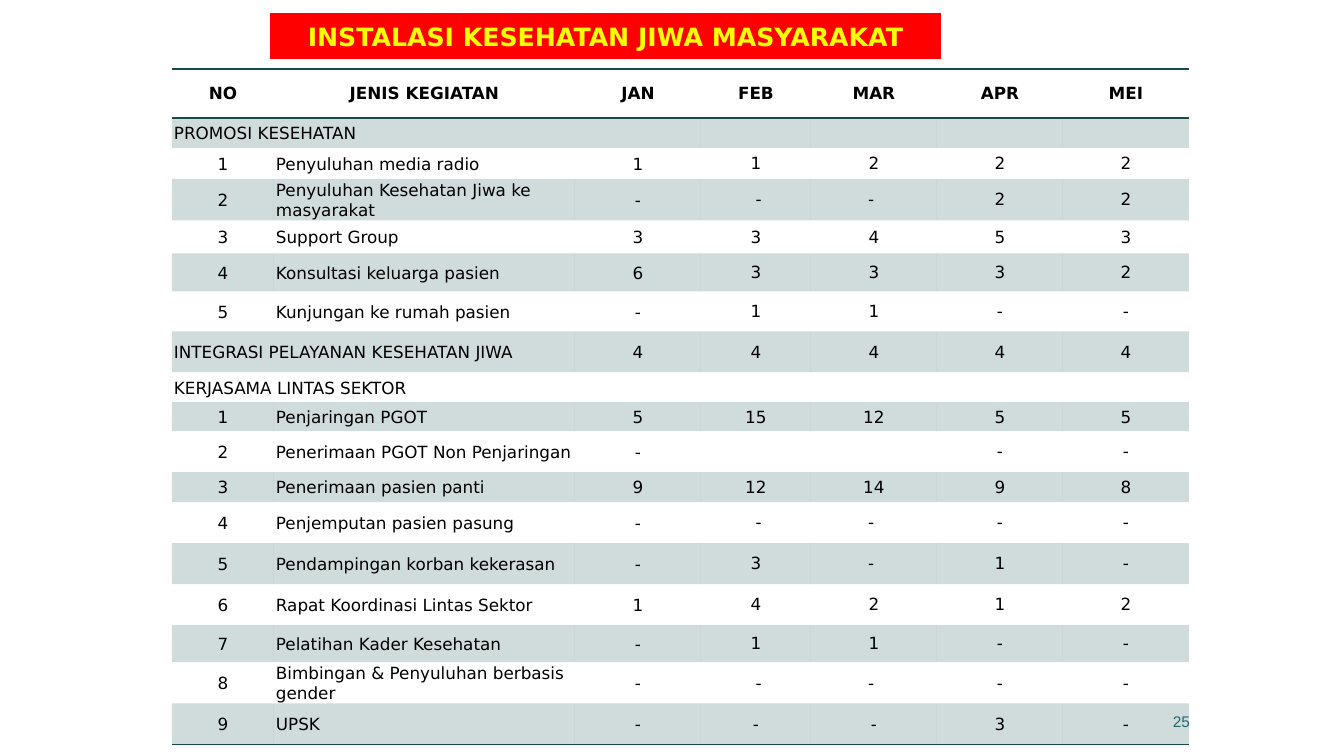
from typing import NamedTuple

from pptx import Presentation
from pptx import util as u
from pptx.dml.color import RGBColor
from pptx.enum import text
from pptx.oxml import parse_xml
from pptx.oxml.ns import nsdecls, qn
from pptx.oxml.xmlchemy import OxmlElement
from pptx.slide import Slide
from pptx.table import Table, _Cell

EMU_PER_PX = 914400 / 100.8
BLACK = RGBColor(0x00, 0x00, 0x00)
DARK_TEAL = RGBColor(0x16, 0x4B, 0x4F)
PAGE_TEAL = RGBColor(0x1F, 0x69, 0x6F)
RED = RGBColor(0xFF, 0x00, 0x00)
YELLOW = RGBColor(0xFF, 0xFF, 0x00)
FONT = "DejaVu Sans"
PLAIN_TABLE_STYLE = "{2D5ABB26-0587-4C30-8999-92F81FD0307C}"
COLUMN_WIDTHS = (102, 301, 126, 110, 126, 126, 126)


class Row(NamedTuple):
    height: int
    labels: tuple[str, str]
    counts: tuple[str, ...] = ("",) * 5
    span: int = 1


HEADER = Row(49, ("NO", "JENIS KEGIATAN"), ("JAN", "FEB", "MAR", "APR", "MEI"))
ROWS = (
    HEADER,
    Row(30, ("PROMOSI KESEHATAN", ""), span=3),
    Row(31, ("1", "Penyuluhan media radio"), ("1", "1", "2", "2", "2")),
    Row(41, ("2", "Penyuluhan Kesehatan Jiwa ke masyarakat"), ("-", " -", "- ", "2", "2")),
    Row(33, ("3", "Support Group"), ("3", "3", "4", "5", "3")),
    Row(38, ("4", "Konsultasi keluarga pasien"), ("6", "3", "3", "3", "2")),
    Row(40, ("5", "Kunjungan ke rumah pasien"), ("-", "1", "1", "-", "-")),
    Row(41, ("INTEGRASI PELAYANAN KESEHATAN JIWA", ""), ("4",) * 5, span=2),
    Row(30, ("KERJASAMA LINTAS SEKTOR ", ""), span=2),
    Row(29, ("1", "Penjaringan PGOT"), ("5", "15", "12", "5", "5")),
    Row(41, ("2", "Penerimaan PGOT Non Penjaringan"), ("-", "", "", "-", "-")),
    Row(30, ("3", "Penerimaan pasien panti"), ("9", "12", "14", "9", "8")),
    Row(41, ("4", "Penjemputan pasien pasung"), ("-", " -", "- ", "-", "-")),
    Row(41, ("5", "Pendampingan korban kekerasan"), ("-", "3", "- ", "1", "-")),
    Row(41, ("6", "Rapat Koordinasi Lintas Sektor"), ("1", "4", "2", "1", "2")),
    Row(37, ("7", "Pelatihan Kader Kesehatan"), ("-", "1", "1", "-", "-")),
    Row(41, ("8", "Bimbingan & Penyuluhan berbasis gender"), ("-", " -", "- ", "-", "-")),
    Row(41, ("9", "UPSK"), ("-", "-", "-", "3", "-")),
)


def px(length: int) -> u.Emu:
    return u.Emu(round(length * EMU_PER_PX))


def add_border(cell: _Cell, edge: str) -> None:
    cell._tc.get_or_add_tcPr().append(parse_xml(
        f'<a:{edge} {nsdecls("a")} w="12700"><a:solidFill>'
        f'<a:srgbClr val="{DARK_TEAL}"/></a:solidFill></a:{edge}>'))


def fill_band(cell: _Cell) -> None:
    """Fill the cell with teal at 20 % opacity."""
    cell.fill.solid()
    cell.fill.fore_color.rgb = DARK_TEAL
    alpha = OxmlElement("a:alpha")
    alpha.set("val", "20000")
    cell._tc.tcPr.find(f'{qn("a:solidFill")}/{qn("a:srgbClr")}').append(alpha)


def write_cell(cell: _Cell, content: str, is_header: bool, column: int, centred: bool) -> None:
    cell.vertical_anchor = text.MSO_ANCHOR.MIDDLE
    side = 20 if is_header else 2 if column < 3 else 1
    cell.margin_left = cell.margin_right = px(side)
    cell.margin_top = px(8 if is_header else min(side, 2))
    cell.margin_bottom = px(8 if is_header else 0)
    paragraph = cell.text_frame.paragraphs[0]
    paragraph.text = content
    paragraph.alignment = text.PP_ALIGN.CENTER if centred else text.PP_ALIGN.LEFT
    for run in paragraph.runs:
        run.font.name, run.font.size = FONT, u.Pt(12)
        run.font.bold, run.font.color.rgb = is_header, BLACK
    if not content:
        end_mark = OxmlElement("a:endParaRPr")
        end_mark.set("sz", "1200")
        paragraph._p.append(end_mark)


def fill_row(table: Table, index: int, row: Row) -> None:
    table.rows[index].height = px(row.height)
    is_header = row is HEADER
    for column, content in enumerate(row.labels + row.counts):
        cell = table.cell(index, column)
        left_aligned = not is_header and (column == 1 or (column == 0 and row.span > 1))
        write_cell(cell, content, is_header, column, not left_aligned)
        if is_header:
            add_border(cell, "lnT")
        if is_header or index == len(ROWS) - 1:
            add_border(cell, "lnB")
        if index % 2:
            fill_band(cell)
        else:
            cell.fill.background()
    if row.span > 1:
        table.cell(index, 0).merge(table.cell(index, row.span - 1))


def add_activity_table(slide: Slide) -> None:
    frame = slide.shapes.add_table(
        len(ROWS), len(COLUMN_WIDTHS), px(172), px(69),
        px(sum(COLUMN_WIDTHS)), px(sum(row.height for row in ROWS)))
    table = frame.table
    table.first_row = table.horz_banding = False
    table._tbl.tblPr.find(qn("a:tableStyleId")).text = PLAIN_TABLE_STYLE
    for column, width in zip(table.columns, COLUMN_WIDTHS):
        column.width = px(width)
    for index, row in enumerate(ROWS):
        fill_row(table, index, row)


def add_page_number(slide: Slide) -> None:
    page = slide.shapes.add_textbox(px(887), px(701), px(313), px(40)).text_frame
    page.word_wrap = True
    page.vertical_anchor = text.MSO_ANCHOR.MIDDLE
    page.text = "25"
    page.paragraphs[0].alignment = text.PP_ALIGN.RIGHT
    font = page.paragraphs[0].runs[0].font
    font.name, font.size, font.color.rgb = "Arial", u.Pt(11), PAGE_TEAL


def format_title(slide: Slide) -> None:
    title = slide.shapes.title
    title.left, title.top, title.width, title.height = px(270), px(13), px(671), px(46)
    title._element.spPr.append(parse_xml(
        f'<a:prstGeom {nsdecls("a")} prst="roundRect"><a:avLst/></a:prstGeom>'))
    title.fill.solid()
    title.fill.fore_color.rgb = RED
    heading = title.text_frame
    heading.text = "INSTALASI KESEHATAN JIWA MASYARAKAT"
    heading.auto_size = text.MSO_AUTO_SIZE.NONE
    heading.vertical_anchor = text.MSO_ANCHOR.MIDDLE
    heading.paragraphs[0].alignment = text.PP_ALIGN.CENTER
    font = heading.paragraphs[0].runs[0].font
    font.name, font.size, font.bold, font.color.rgb = FONT, u.Pt(18), True, YELLOW


def main() -> None:
    presentation = Presentation()
    presentation.slide_width, presentation.slide_height = px(1344), px(756)
    slide = presentation.slides.add_slide(presentation.slide_layouts[5])
    format_title(slide)
    add_activity_table(slide)
    add_page_number(slide)
    presentation.save("out.pptx")


if __name__ == "__main__":
    main()
